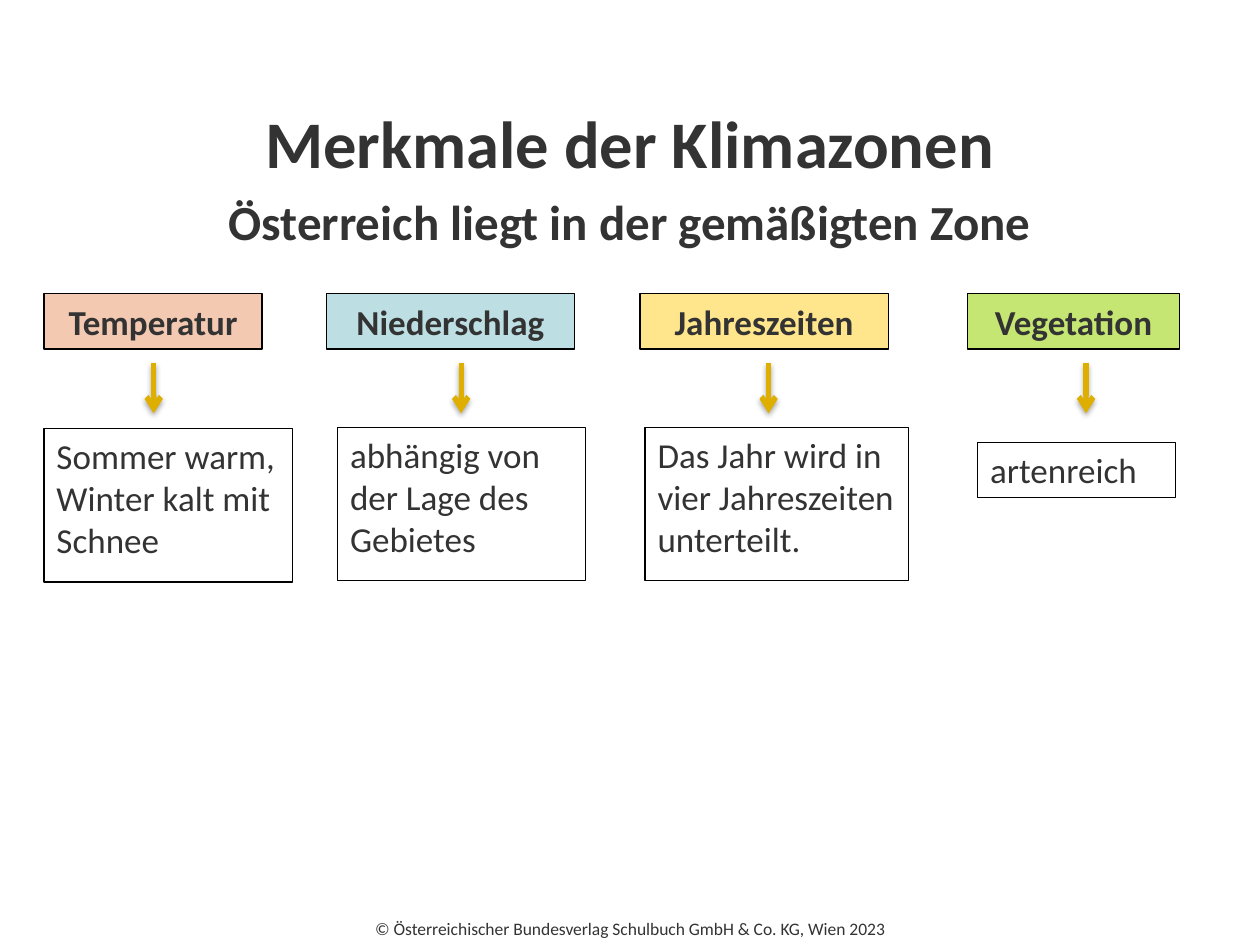
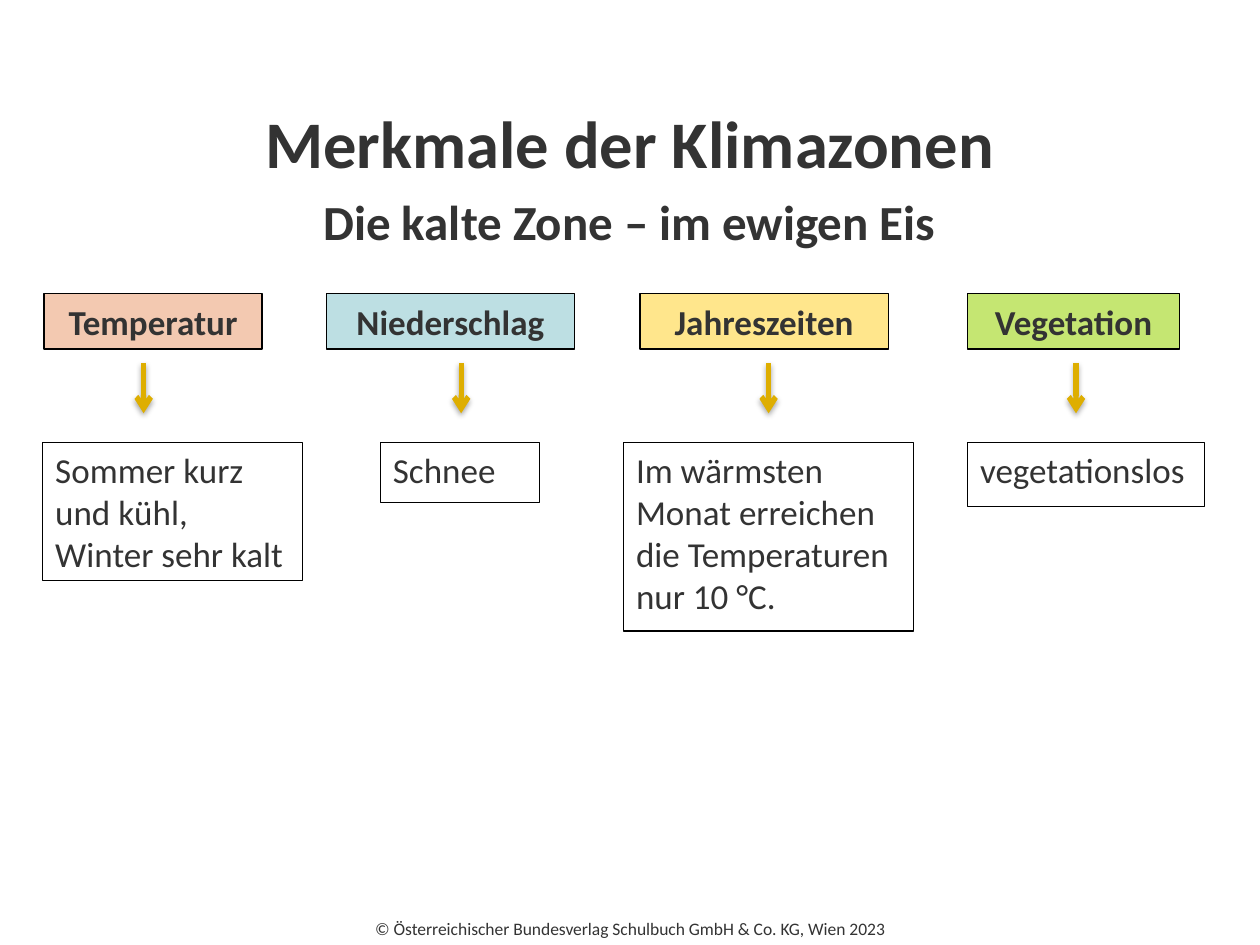
from pptx import Presentation
from pptx.dml.color import RGBColor as Rgb
from pptx.enum.shapes import MSO_CONNECTOR as Link, MSO_SHAPE as Form
from pptx.enum.text import MSO_ANCHOR as Anchor, PP_ALIGN as Align
from pptx.oxml import parse_xml
from pptx.oxml.ns import nsdecls
from pptx.util import Inches, Pt

deck = Presentation()
deck.slide_width, deck.slide_height = Inches(10), Inches(7.5)
unit = deck.slide_width // 10
step = 2.44


def hue(code):
    return Rgb.from_string(code)


def put(slide, spot, text, size, bold=False, align=Align.CENTER, anchor=Anchor.TOP, fill=None, edge=True):
    area = [int(n * unit) for n in spot]
    if edge:
        box = slide.shapes.add_shape(Form.RECTANGLE, *area)
        box.shadow.inherit = False
        box.line.color.rgb = hue("000000")
        box.line.width = Pt(0.75)
        if fill:
            box.fill.solid()
            box.fill.fore_color.rgb = hue(fill)
        else:
            box.fill.background()
    else:
        box = slide.shapes.add_textbox(*area)
    frame = box.text_frame
    frame.word_wrap = True
    frame.vertical_anchor = anchor
    frame.text = text
    line = frame.paragraphs[0]
    line.alignment = align
    for key, value in {"name": "Calibri", "size": Pt(size), "bold": bold}.items():
        setattr(line.font, key, value)
    line.font.color.rgb = hue("333333")


heads = [
    ("Temperatur", 0.35, 1.73, "F3C9B1"),
    ("Niederschlag", 2.59, 1.97, "BDDFE3"),
    ("Jahreszeiten", 5.08, 1.97, "FFE68C"),
    ("Vegetation", 7.68, 1.68, "C5E672"),
]
zones = [
    ("Österreich liegt in der gemäßigten Zone", (0, 0, 0, 0.08), [
        ("Sommer warm, Winter kalt mit Schnee", (0.35, 3.4, 1.97, 1.22)),
        ("abhängig von der Lage des Gebietes", (2.68, 3.39, 1.97, 1.22)),
        ("Das Jahr wird in vier Jahreszeiten unterteilt.", (5.12, 3.39, 2.09, 1.22)),
        ("artenreich", (7.76, 3.51, 1.57, 0.44)),
    ]),
    ("Die kalte Zone – im ewigen Eis", (-0.08, 0, 0, 0), [
        ("Sommer kurz und kühl, Winter sehr kalt", (0.34, 3.51, 2.06, 1.1)),
        ("Schnee", (3.02, 3.51, 1.26, 0.48)),
        ("Im wärmsten Monat erreichen die Temperaturen nur 10 °C.", (4.95, 3.51, 2.3, 1.5)),
        ("vegetationslos", (7.68, 3.51, 1.88, 0.51)),
    ]),
]

for zone, shifts, facts in zones:
    slide = deck.slides.add_slide(deck.slide_layouts[6])
    put(slide, (0, 7.11, 10, 0.39), "© Österreichischer Bundesverlag Schulbuch GmbH & Co. KG, Wien 2023",
        10, anchor=Anchor.BOTTOM, edge=False)
    put(slide, (0.5, 0.76, 9, 0.74), "Merkmale der Klimazonen", 38, True, anchor=Anchor.MIDDLE, edge=False)
    put(slide, (0.35, 1.47, 9.29, 0.63), zone, 28, True, edge=False)
    for col, (head, shift, fact) in enumerate(zip(heads, shifts, facts)):
        name, left, width, fill = head
        x = int(((col + 0.5) * step + shift) * unit)
        arrow = slide.shapes.add_connector(Link.STRAIGHT, x, int(2.88 * unit), x, int(3.28 * unit))
        arrow.line.color.rgb = hue("DEAE00")
        arrow.line.width = Pt(3)
        arrow.line._get_or_add_ln().append(parse_xml(f'<a:tailEnd {nsdecls("a")} type="arrow"/>'))
        arrow._element.spPr.append(parse_xml(
            f'<a:effectLst {nsdecls("a")}><a:outerShdw blurRad="40000" dist="23000" dir="5400000" rotWithShape="0">'
            '<a:srgbClr val="000000"><a:alpha val="35000"/></a:srgbClr></a:outerShdw></a:effectLst>'))
        text, spot = fact
        put(slide, spot, text, 20, align=Align.LEFT)
        put(slide, (left, 2.33, width, 0.44), name, 20, True, anchor=Anchor.MIDDLE, fill=fill)

deck.save("out.pptx")
